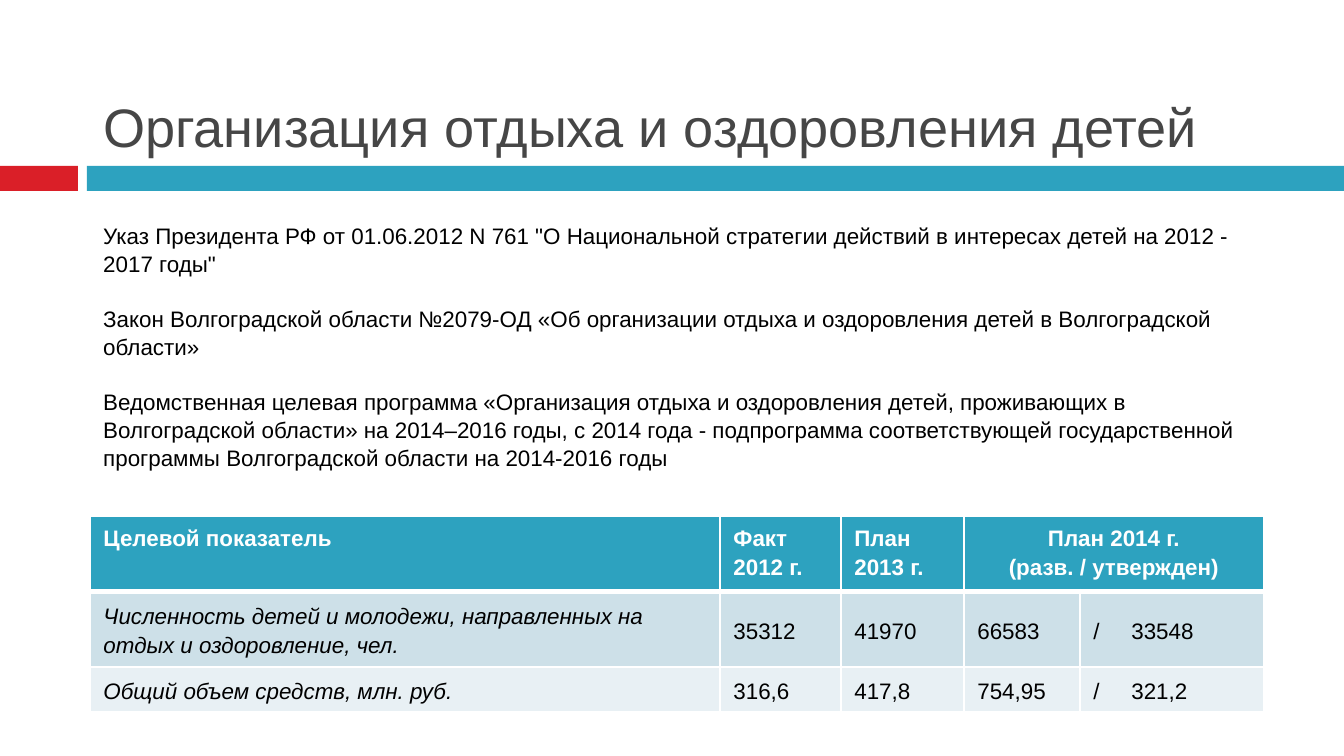
from lxml import etree
from pptx import Presentation
from pptx import util as u
from pptx.dml import color
from pptx.enum import shapes, text
from pptx.oxml import ns

SCALE = 914400 / 134.4
FONT = "Arial"
COLORS = {
    "red": "DA1F28",
    "teal": "2DA2BF",
    "title": "464646",
    "body": "000000",
    "white": "FFFFFF",
    "band_dark": "CDE0E8",
    "band_light": "E8F0F4",
}
TITLE = "Организация отдыха и оздоровления детей"
LAWS = [
    'Указ Президента РФ от 01.06.2012 N 761 "О Национальной стратегии действий '
    'в интересах детей на 2012 - 2017 годы"',
    "Закон Волгоградской области №2079-ОД «Об организации отдыха и оздоровления "
    "детей в Волгоградской области»",
    "Ведомственная целевая программа «Организация отдыха и оздоровления детей, "
    "проживающих в Волгоградской области» на 2014–2016 годы, с 2014 года - "
    "подпрограмма соответствующей государственной программы Волгоградской области "
    "на 2014-2016 годы",
]
ROWS = [
    ["Целевой показатель", "Факт 2012 г.", "План 2013 г.",
     "План 2014 г.\n(разв. / утвержден)", ""],
    ["Численность детей и молодежи, направленных на отдых и оздоровление, чел.",
     "35312", "41970", "66583", "/\t33548"],
    ["Общий объем средств, млн. руб.", "316,6", "417,8", "754,95", "/\t321,2"],
]
COLUMN_WIDTHS = [630, 121, 123, 116, 184]
ROW_HEIGHTS = [74, 76, 44]
ROW_FILLS = ["teal", "band_dark", "band_light"]
TAB_STOP = 38


def px(value):
    return u.Emu(round(value * SCALE))


def rgb(name):
    return color.RGBColor.from_string(COLORS[name])


def format_runs(paragraph, size, color_name, bold=False, italic=False):
    for run in paragraph.runs:
        run.font.name = FONT
        run.font.size = u.Pt(size)
        run.font.bold = bold
        run.font.italic = italic
        run.font.color.rgb = rgb(color_name)


def add_bar(slide, left, width, color_name):
    bar = slide.shapes.add_shape(
        shapes.MSO_SHAPE.RECTANGLE, px(left), px(166), px(width), px(25))
    bar.shadow.inherit = False
    bar.fill.solid()
    bar.fill.fore_color.rgb = rgb(color_name)
    bar.line.fill.background()


def add_text(slide, box, paragraphs, size, color_name, anchor, gap=0, spacing=1.0):
    frame = slide.shapes.add_textbox(*map(px, box)).text_frame
    frame.word_wrap = True
    frame.vertical_anchor = anchor
    frame.text = "\n".join(paragraphs)
    for index, paragraph in enumerate(frame.paragraphs):
        paragraph.line_spacing = spacing
        paragraph.space_before = u.Pt(gap if index else 0)
        format_runs(paragraph, size, color_name)


def set_borders(cell, top, bottom):
    properties = cell._tc.get_or_add_tcPr()
    for tag, width in (("a:lnL", 1), ("a:lnR", 1), ("a:lnT", top), ("a:lnB", bottom)):
        line = etree.SubElement(properties, ns.qn(tag), w=str(u.Pt(width)))
        fill = etree.SubElement(line, ns.qn("a:solidFill"))
        etree.SubElement(fill, ns.qn("a:srgbClr"), val=COLORS["white"])


def add_tab_stop(paragraph):
    stops = etree.SubElement(paragraph._p.get_or_add_pPr(), ns.qn("a:tabLst"))
    etree.SubElement(stops, ns.qn("a:tab"), pos=str(px(TAB_STOP)), algn="l")


def fill_cell(cell, content, row, column):
    header = row == 0
    set_borders(cell, top=3 if row == 1 else 1, bottom=3 if header else 1)
    cell.fill.solid()
    cell.fill.fore_color.rgb = rgb(ROW_FILLS[row])
    cell.vertical_anchor = text.MSO_ANCHOR.TOP if header else text.MSO_ANCHOR.MIDDLE
    cell.text_frame.text = content
    for paragraph in cell.text_frame.paragraphs:
        paragraph.line_spacing = 1.15
        if header and column == 3:
            paragraph.alignment = text.PP_ALIGN.CENTER
        if "\t" in content:
            add_tab_stop(paragraph)
        format_runs(paragraph, 12, "white" if header else "body",
                    bold=header, italic=not header and column == 0)


def add_indicator_table(slide):
    table = slide.shapes.add_table(
        len(ROWS), len(COLUMN_WIDTHS), px(90), px(516),
        px(sum(COLUMN_WIDTHS)), px(sum(ROW_HEIGHTS))).table
    table.first_row = False
    table.horz_banding = False
    for column, width in zip(table.columns, COLUMN_WIDTHS):
        column.width = px(width)
    for row, height in zip(table.rows, ROW_HEIGHTS):
        row.height = px(height)
    for row, contents in enumerate(ROWS):
        for column, content in enumerate(contents):
            fill_cell(table.cell(row, column), content, row, column)
    table.cell(0, 3).merge(table.cell(0, 4))


def main():
    presentation = Presentation()
    presentation.slide_width = px(1344)
    presentation.slide_height = px(756)
    slide = presentation.slides.add_slide(presentation.slide_layouts[6])
    add_bar(slide, 0, 78, "red")
    add_bar(slide, 87, 1257, "teal")
    add_text(slide, (90, 17, 1199, 148), [TITLE], 29, "title", text.MSO_ANCHOR.BOTTOM)
    add_text(slide, (90, 215, 1207, 258), LAWS, 12, "body", text.MSO_ANCHOR.TOP,
             gap=14.4, spacing=1.04)
    add_indicator_table(slide)
    presentation.save("out.pptx")


if __name__ == "__main__":
    main()
